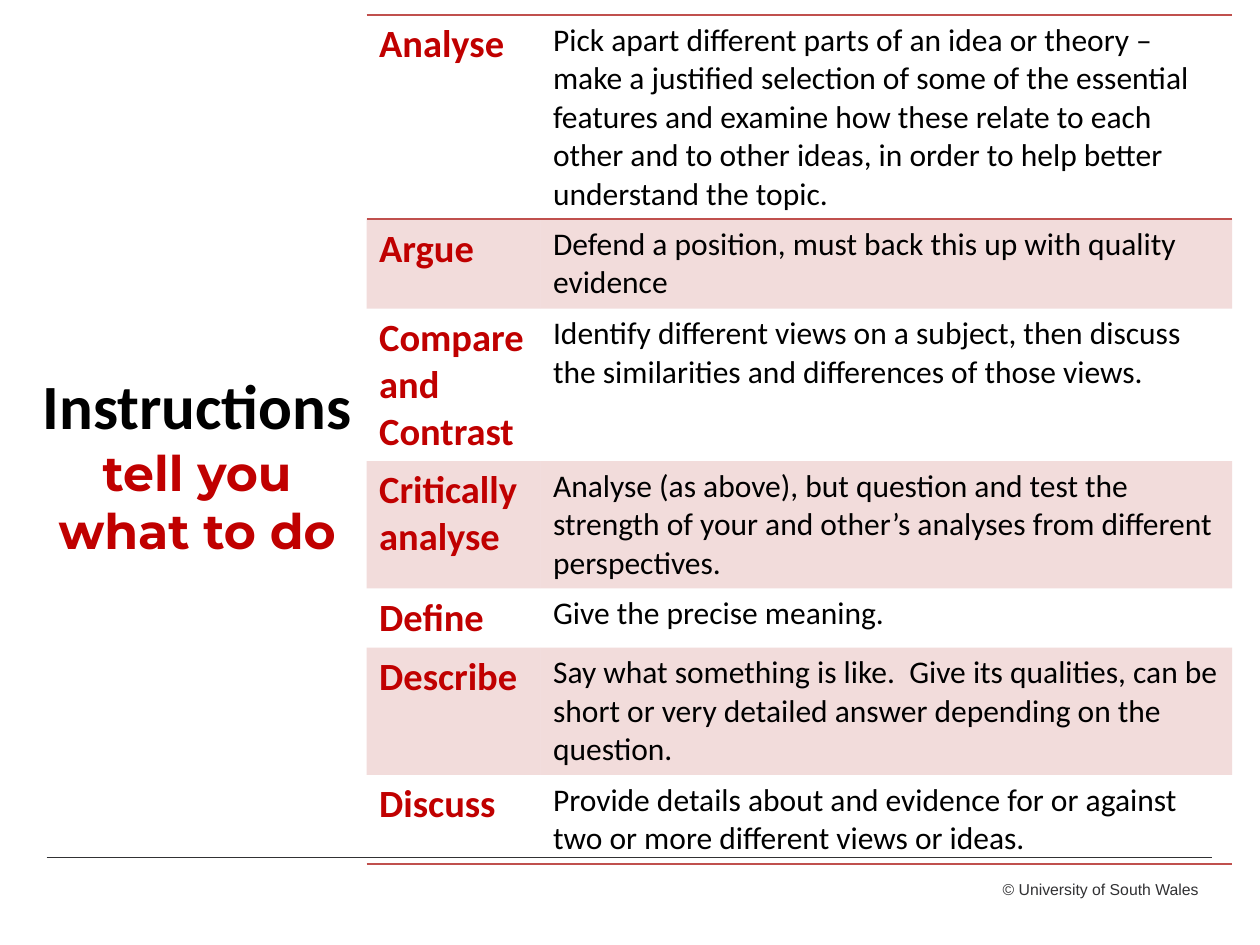
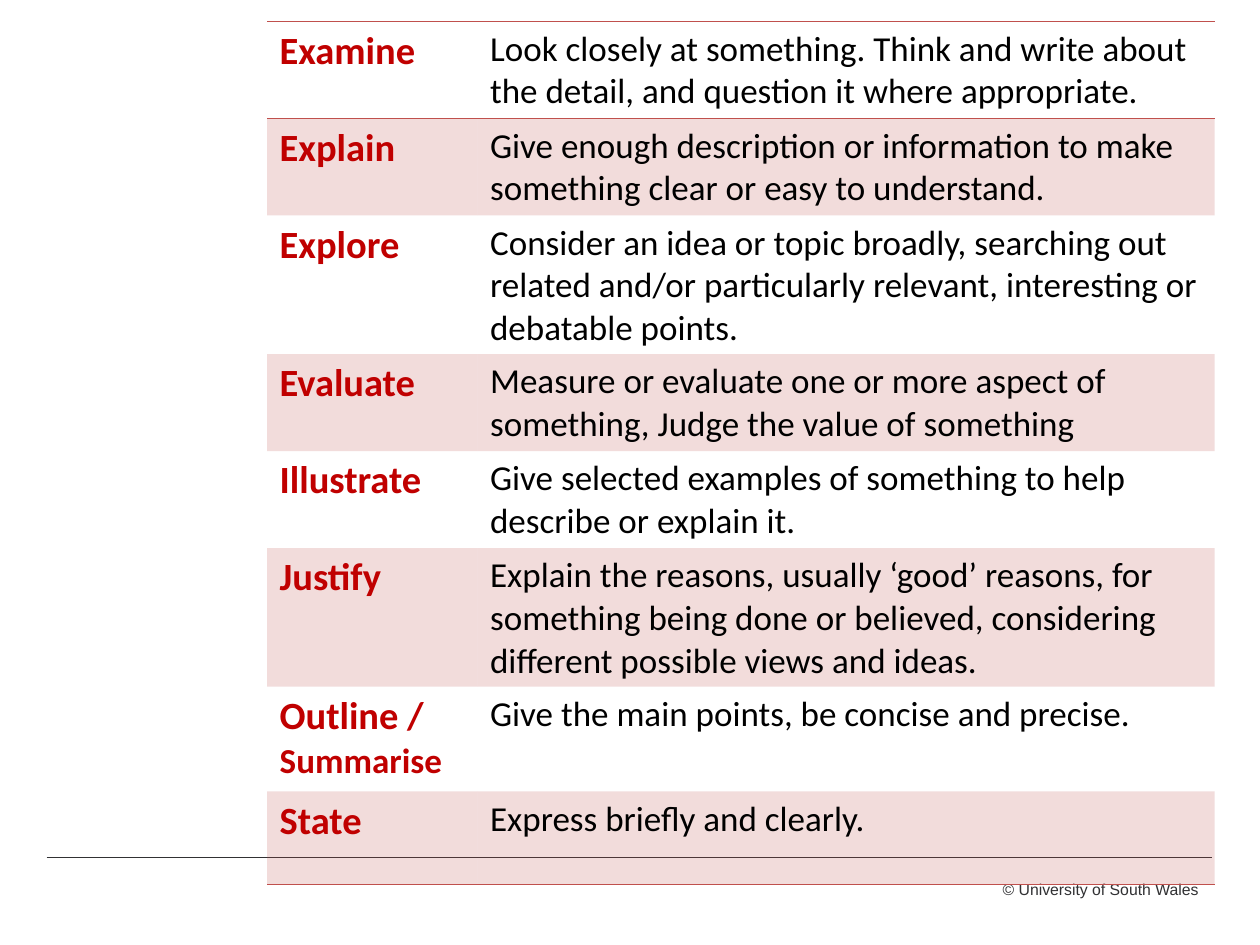
from dataclasses import dataclass

import lxml.etree
import pptx
import pptx.dml.color
import pptx.enum.shapes
import pptx.enum.text
import pptx.oxml.ns
import pptx.util

ALIGN = pptx.enum.text.PP_ALIGN
qn = pptx.oxml.ns.qn


@dataclass(frozen=True)
class Theme:
    """Colours, fonts and type sizes shared by the slides."""
    red: str = "C00000"
    rule: str = "C0504D"
    ink: str = "000000"
    grey: str = "313133"
    body: str = "Calibri"
    accent: str = "Montserrat"
    small: str = "Arial"
    term_size: int = 22
    footer_size: int = 9
    band_alpha: int = 20000
    plain_style: str = "{2D5ABB26-0587-4C30-8999-92F81FD0307C}"


THEME = Theme()
COLS, ROWS = 100, 75

FIRST_TERMS = [
    (16.2, ["Analyse"], "Pick apart different parts of an idea or theory – make a justified "
     "selection of some of the essential features and examine how these relate to each other "
     "and to other ideas, in order to help better understand the topic."),
    (7.1, ["Argue"], "Defend a position, must back this up with quality evidence"),
    (12.1, ["Compare and Contrast"], "Identify different views on a subject, then discuss the "
     "similarities and differences of those views."),
    (10.1, ["Critically analyse"], "Analyse (as above), but question and test the strength of "
     "your and other’s analyses from different perspectives."),
    (4.7, ["Define"], "Give the precise meaning."),
    (10.1, ["Describe"], "Say what something is like.  Give its qualities, can be short or very "
     "detailed answer depending on the question."),
    (7.1, ["Discuss"], "Provide details about and evidence for or against two or more different "
     "views or ideas."),
]
SECOND_TERMS = [
    (7.7, ["Examine"], "Look closely at something. Think and write about the detail, and "
     "question it where appropriate."),
    (7.7, ["Explain"], "Give enough description or information to make something clear or easy "
     "to understand."),
    (11, ["Explore"], "Consider an idea or topic broadly, searching out related and/or "
     "particularly relevant, interesting or debatable points."),
    (7.7, ["Evaluate"], "Measure or evaluate one or more aspect of something, Judge the value "
     "of something"),
    (7.7, ["Illustrate"], "Give selected examples of something to help describe or explain it."),
    (11, ["Justify"], "Explain the reasons, usually ‘good’ reasons, for something being done or "
     "believed, considering different possible views and ideas."),
    (8.3, ["Outline / ", "Summarise"], "Give the main points, be concise and precise."),
    (7.4, ["State"], "Express briefly and clearly."),
]


def grid(*units):
    """Turn grid units, a tenth of an inch each, into lengths."""
    return [pptx.util.Inches(unit / 10) for unit in units]


def rgb(color):
    """Return a colour object for a hex string."""
    return pptx.dml.color.RGBColor.from_string(color)


def add_run(p, text, size, color, font=THEME.body, bold=False):
    """Add one styled run to a paragraph."""
    r = p.add_run()
    r.text = text
    r.font.size = pptx.util.Pt(size)
    r.font.name = font
    r.font.bold = bold
    r.font.color.rgb = rgb(color)


def add_text_box(slide, box, align, wrap=True):
    """Add an empty text box and return its first paragraph."""
    tf = slide.shapes.add_textbox(*grid(*box)).text_frame
    tf.word_wrap = wrap
    p = tf.paragraphs[0]
    p.alignment = align
    return p


def add_footer(slide):
    """Draw the hairline and copyright line at the foot of a slide."""
    line = slide.shapes.add_connector(
        pptx.enum.shapes.MSO_CONNECTOR.STRAIGHT, *grid(3.7, 68, 96.2, 68))
    line.line.color.rgb = rgb(THEME.grey)
    line.line.width = pptx.util.Pt(0.25)
    lxml.etree.SubElement(line._element.spPr, qn("a:effectLst"))
    p = add_text_box(slide, (78.4, 69.3, 17.7, 2.5), ALIGN.RIGHT, wrap=False)
    add_run(p, "© University of South Wales", THEME.footer_size, THEME.grey, THEME.small)


def add_title(slide):
    """Write the heading beside the table."""
    p = add_text_box(slide, (1.8, 28.6, 27.7, 33.5), ALIGN.CENTER)
    add_run(p, "Instructions", 36, THEME.ink, bold=True)
    p.add_line_break()
    add_run(p, "tell you what to do", 28, THEME.red, THEME.accent, True)


def add_border(cell, side):
    """Rule one side of a cell: T for top or B for bottom."""
    tcPr = cell._tc.get_or_add_tcPr()
    ln = lxml.etree.SubElement(tcPr, qn(f"a:ln{side}"), w=str(pptx.util.Pt(1)))
    fill = lxml.etree.SubElement(ln, qn("a:solidFill"))
    lxml.etree.SubElement(fill, qn("a:srgbClr"), val=THEME.rule)


def fill_band(cell, banded):
    """Give a cell the translucent band colour or no fill."""
    if not banded:
        cell.fill.background()
        return
    cell.fill.solid()
    cell.fill.fore_color.rgb = rgb(THEME.rule)
    color = cell._tc.tcPr.find(".//" + qn("a:solidFill") + "[last()]/" + qn("a:srgbClr"))
    for fill in cell._tc.tcPr.findall(qn("a:solidFill")):
        color = fill.find(qn("a:srgbClr"))
    lxml.etree.SubElement(color, qn("a:alpha"), val=str(THEME.band_alpha))


def add_glossary(slide, left, top, widths, terms, size, term_sizes):
    """Add a banded table of instruction words and their meanings."""
    height = sum(term[0] for term in terms)
    box = grid(left, top, sum(widths), height)
    table = slide.shapes.add_table(len(terms), len(widths), *box).table
    table.first_row = table.horz_banding = False
    table._tbl.tblPr.find(qn("a:tableStyleId")).text = THEME.plain_style
    for column, width in zip(table.columns, grid(*widths)):
        column.width = width
    last = len(terms) - 1
    for i, (row_height, words, meaning) in enumerate(terms):
        table.rows[i].height = grid(row_height)[0]
        term_cell, meaning_cell = table.cell(i, 0), table.cell(i, 1)
        for word, word_size in zip(words, term_sizes):
            add_run(term_cell.text_frame.paragraphs[0], word, word_size, THEME.red, bold=True)
        add_run(meaning_cell.text_frame.paragraphs[0], meaning, size, THEME.ink)
        for cell in (term_cell, meaning_cell):
            if i == 0:
                add_border(cell, "T")
            if i in (0, last):
                add_border(cell, "B")
            fill_band(cell, i % 2 == 1)


def add_slide(prs):
    """Add a blank slide with the shared footer."""
    slide = prs.slides.add_slide(prs.slide_layouts[6])
    add_footer(slide)
    return slide


def main():
    """Build both slides and save the deck."""
    prs = pptx.Presentation()
    prs.slide_width, prs.slide_height = grid(COLS, ROWS)
    term_sizes = (THEME.term_size, 20)

    slide = add_slide(prs)
    add_title(slide)
    add_glossary(slide, 29.1, 1.2, (13.8, 54.9), FIRST_TERMS, 18, term_sizes)

    slide = add_slide(prs)
    add_glossary(slide, 21.2, 1.7, (16.7, 58.5), SECOND_TERMS, 20, term_sizes)

    prs.save("out.pptx")


if __name__ == "__main__":
    main()
